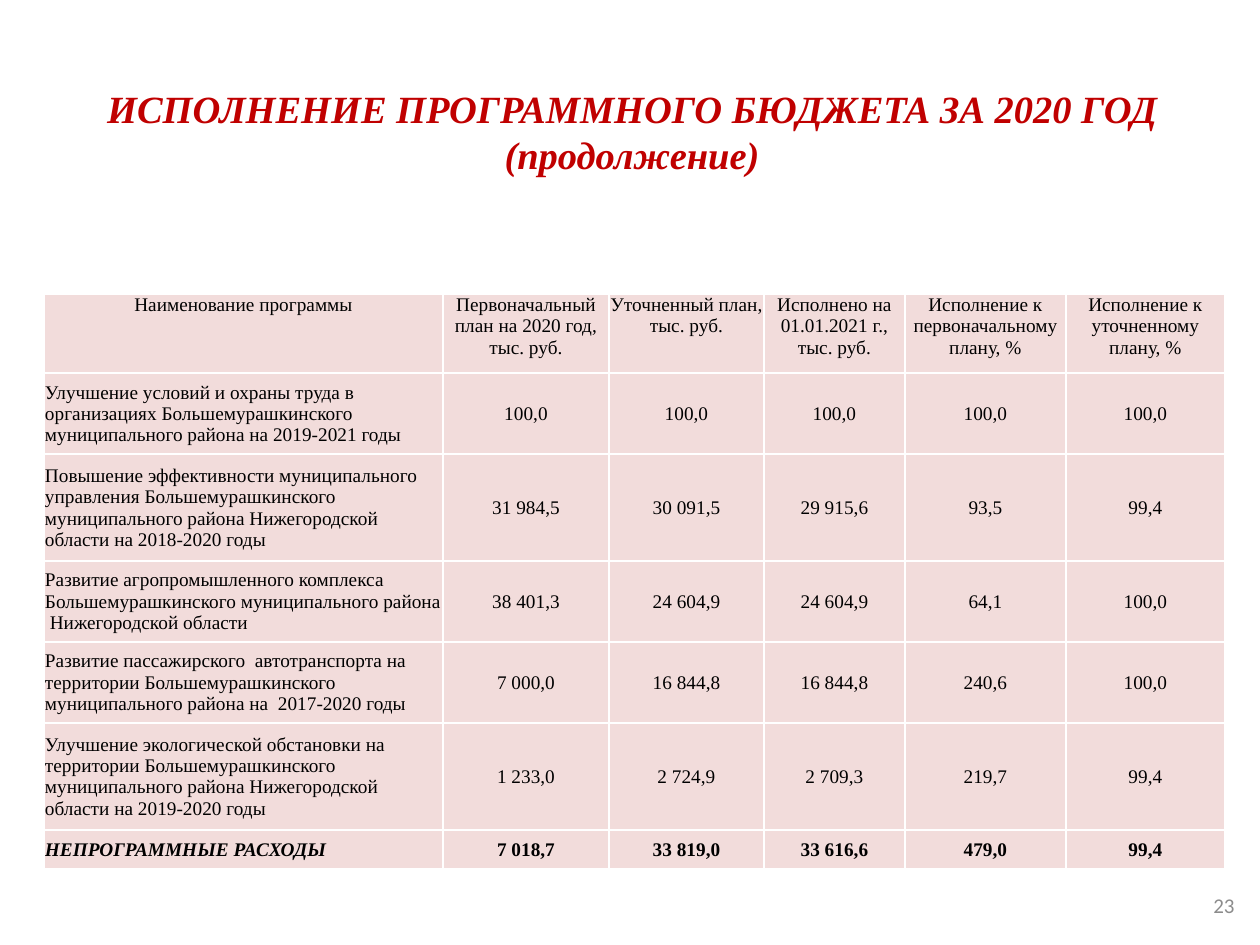
from dataclasses import dataclass

from lxml import etree
from pptx import Presentation
from pptx import util as u
from pptx.dml.color import RGBColor
from pptx.enum import text
from pptx.oxml.ns import qn

RED = RGBColor(0xC0, 0x00, 0x00)
GRAY = RGBColor(0x8C, 0x8C, 0x8C)
BLACK = RGBColor(0x00, 0x00, 0x00)
WHITE = RGBColor(0xFF, 0xFF, 0xFF)
PINK = RGBColor(0xF2, 0xDC, 0xDB)

SERIF = "Times New Roman"
SANS = "Calibri"
LEFT, CENTER, RIGHT = text.PP_ALIGN.LEFT, text.PP_ALIGN.CENTER, text.PP_ALIGN.RIGHT
TOP, MIDDLE = text.MSO_ANCHOR.TOP, text.MSO_ANCHOR.MIDDLE


def px(n: int) -> u.Emu:
    return u.Emu(round(n * 914400 / 126))


@dataclass
class Style:
    font: str
    size: int
    color: RGBColor
    align: text.PP_ALIGN
    bold: bool = False
    italic: bool = False


@dataclass
class Label:
    lines: str
    left: int
    top: int
    width: int
    height: int
    anchor: text.MSO_ANCHOR
    style: Style


@dataclass
class Program:
    height: int
    name: str
    values: tuple[str, ...]
    total: bool = False


LABELS = [
    Label("23", 1196, 880, 51, 50, MIDDLE, Style(SANS, 12, GRAY, RIGHT)),
    Label("ИСПОЛНЕНИЕ ПРОГРАММНОГО БЮДЖЕТА ЗА 2020 ГОД\n(продолжение)",
          88, 79, 1088, 106, TOP, Style(SERIF, 22, RED, CENTER, True, True)),
]

TABLE_LEFT, TABLE_TOP = 44, 294
COLUMN_WIDTHS = (399, 166, 155, 141, 161, 159)
HEADER_HEIGHT = 79
HEADERS = (
    "Наименование программы",
    "Первоначальный план на 2020 год, тыс. руб.",
    "Уточненный план,\nтыс. руб.",
    "Исполнено на 01.01.2021 г., тыс. руб.",
    "Исполнение к первоначальному плану, %",
    "Исполнение к уточненному плану, %",
)
PROGRAMS = [
    Program(81, "Улучшение условий и охраны труда в организациях Большемурашкинского "
                "муниципального района на 2019-2021 годы",
            ("100,0", "100,0", "100,0", "100,0", "100,0")),
    Program(107, "Повышение эффективности муниципального управления Большемурашкинского "
                 "муниципального района Нижегородской области на 2018-2020 годы",
            ("31 984,5", "30 091,5", "29 915,6", "93,5", "99,4")),
    Program(81, "Развитие агропромышленного комплекса Большемурашкинского "
                "муниципального района  Нижегородской области",
            ("38 401,3", "24 604,9", "24 604,9", "64,1", "100,0")),
    Program(81, "Развитие пассажирского  автотранспорта на территории Большемурашкинского "
                "муниципального района на  2017-2020 годы",
            ("7 000,0", "16 844,8", "16 844,8", "240,6", "100,0")),
    Program(107, "Улучшение экологической обстановки на территории Большемурашкинского "
                 "муниципального района Нижегородской области на 2019-2020 годы",
            ("1 233,0", "2 724,9", "2 709,3", "219,7", "99,4")),
    Program(39, "НЕПРОГРАММНЫЕ РАСХОДЫ",
            ("7 018,7", "33 819,0", "33 616,6", "479,0", "99,4"), total=True),
]


def write(tf, lines: str, style: Style) -> None:
    tf.text = lines
    for p in tf.paragraphs:
        p.alignment = style.align
        p.font.name = style.font
        p.font.size = u.Pt(style.size)
        p.font.color.rgb = style.color
        p.font.bold = style.bold
        p.font.italic = style.italic


def add_label(s, label: Label) -> None:
    sp = s.shapes.add_textbox(px(label.left), px(label.top), px(label.width), px(label.height))
    tf = sp.text_frame
    tf.word_wrap = True
    tf.vertical_anchor = label.anchor
    write(tf, label.lines, label.style)


def add_borders(cell) -> None:
    pr = cell._tc.get_or_add_tcPr()
    for i, side in enumerate(("a:lnL", "a:lnR", "a:lnT", "a:lnB")):
        ln = etree.Element(qn(side), w=str(u.Pt(1)))
        fill = etree.SubElement(ln, qn("a:solidFill"))
        etree.SubElement(fill, qn("a:srgbClr"), val=str(WHITE))
        pr.insert(i, ln)


def fill_cell(cell, lines: str, style: Style, anchor: text.MSO_ANCHOR, inset: int) -> None:
    cell.margin_left = cell.margin_right = cell.margin_top = px(inset)
    cell.margin_bottom = 0
    cell.vertical_anchor = anchor
    cell.fill.solid()
    cell.fill.fore_color.rgb = PINK
    add_borders(cell)
    write(cell.text_frame, lines, style)


def add_budget_table(s) -> None:
    heights = [HEADER_HEIGHT] + [program.height for program in PROGRAMS]
    table = s.shapes.add_table(len(heights), len(COLUMN_WIDTHS), px(TABLE_LEFT), px(TABLE_TOP),
                               px(sum(COLUMN_WIDTHS)), px(sum(heights))).table
    for column, width in zip(table.columns, COLUMN_WIDTHS):
        column.width = px(width)
    for row, height in zip(table.rows, heights):
        row.height = px(height)
    for c, header in enumerate(HEADERS):
        fill_cell(table.cell(0, c), header, Style(SERIF, 11, BLACK, CENTER), TOP, 0)
    for r, program in enumerate(PROGRAMS, start=1):
        name_style = Style(SERIF, 11, BLACK, LEFT, program.total, program.total)
        value_style = Style(SERIF, 11, BLACK, CENTER, program.total)
        fill_cell(table.cell(r, 0), program.name, name_style, MIDDLE, 1)
        for c, value in enumerate(program.values, start=1):
            fill_cell(table.cell(r, c), value, value_style, MIDDLE, 1)


def main() -> None:
    prs = Presentation()
    prs.slide_width, prs.slide_height = px(1260), px(945)
    s = prs.slides.add_slide(prs.slide_layouts[6])
    for label in LABELS:
        add_label(s, label)
    add_budget_table(s)
    prs.save("out.pptx")


if __name__ == "__main__":
    main()
